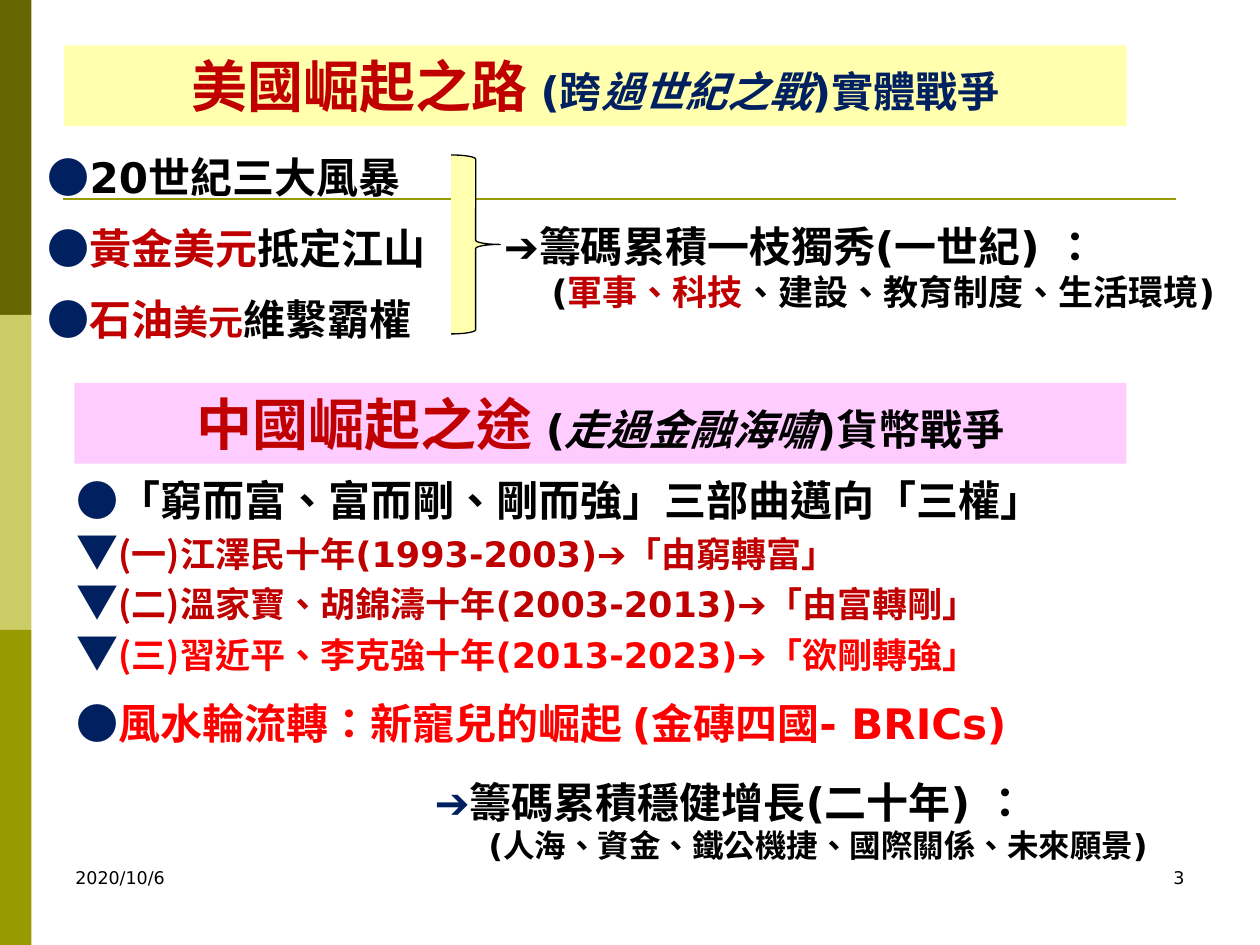
from collections import namedtuple

from pptx import Presentation
from pptx.dml.color import RGBColor
from pptx.enum.shapes import MSO_CONNECTOR as CONNECTOR, MSO_SHAPE as SHAPE
from pptx.enum.text import MSO_ANCHOR as ANCHOR, PP_ALIGN as ALIGN
from pptx.oxml.ns import qn
from pptx.util import Inches, Pt

LATIN, CJK = "DejaVu Sans", "Noto Sans CJK SC"
BLACK, NAVY, CRIMSON, RED = "000000", "002060", "C00000", "FF0000"
YELLOW, PINK, OLIVE = "FFFFAD", "FFCCFF", "999900"

Span = namedtuple("Span", "text size color italic font bold",
                  defaults=(24, BLACK, False, LATIN, True))
DOT = Span("●", color=NAVY, font=CJK)
TRIANGLE = Span("▼", color=NAVY, font=CJK)


def color(hex_text):
    return RGBColor.from_string(hex_text)


class SlideBuilder:
    line_factor = 1.2

    def __init__(self, page):
        self.page = page

    def shape(self, kind, place, fill, line=None):
        shape = self.page.shapes.add_shape(kind, *map(Inches, place))
        shape.shadow.inherit = False
        shape.fill.solid()
        shape.fill.fore_color.rgb = color(fill)
        if line:
            shape.line.color.rgb = color(line)
            shape.line.width = Pt(0.75)
        else:
            shape.line.fill.background()
        return shape

    def rule(self, start, end, line, width):
        rule = self.page.shapes.add_connector(
            CONNECTOR.STRAIGHT, *map(Inches, start + end))
        rule.line.color.rgb = color(line)
        rule.line.width = Pt(width)
        properties = rule._element.spPr
        properties.append(properties.makeelement(qn("a:effectLst"), {}))

    def text(self, place, paragraphs, **layout):
        box = self.page.shapes.add_textbox(*map(Inches, place))
        self.fill_frame(box.text_frame, paragraphs, **layout)

    def banner(self, place, fill, spans):
        box = self.shape(SHAPE.RECTANGLE, place, fill)
        self.fill_frame(box.text_frame, [spans], align=ALIGN.CENTER)

    def fill_frame(self, frame, paragraphs, align=ALIGN.LEFT, gaps=(), indents=()):
        """Gaps (points) and indents (inches) are keyed by paragraph number."""
        gaps, indents = dict(gaps), dict(indents)
        frame.word_wrap = True
        frame.vertical_anchor = ANCHOR.TOP
        for number, spans in enumerate(paragraphs):
            para = frame.add_paragraph() if number else frame.paragraphs[0]
            para.alignment = align
            para.space_before = Pt(gaps.get(number, 0))
            para.line_spacing = Pt(self.line_factor * max(s.size for s in spans))
            if number in indents:
                para._p.get_or_add_pPr().set("indent", str(Inches(indents[number])))
            for span in spans:
                self.add_span(para, span)

    def add_span(self, para, span):
        run = para.add_run()
        run.text = span.text
        font = run.font
        font.name, font.size = span.font, Pt(span.size)
        font.bold, font.italic = span.bold, span.italic
        font.color.rgb = color(span.color)
        properties = run._r.get_or_add_rPr()
        properties.set("lang", "zh-TW")
        properties.append(properties.makeelement(qn("a:ea"), {"typeface": CJK}))


def main():
    deck = Presentation()
    deck.slide_width, deck.slide_height = Inches(10), Inches(7.5)
    builder = SlideBuilder(deck.slides.add_slide(deck.slide_layouts[6]))

    # Side bands and rule
    for index, fill in enumerate(("666600", "CCCC66", OLIVE)):
        builder.shape(SHAPE.RECTANGLE, (0, 2.5 * index, 0.25, 2.5), fill)
    builder.rule((0.5, 1.58), (9.33, 1.58), OLIVE, 1.5)

    # Date and page number
    for left, label, align in ((0.5, "2020/10/6", ALIGN.LEFT),
                               (7.17, "3", ALIGN.RIGHT)):
        builder.text((left, 6.83, 2.33, 0.5),
                     [[Span(label, 10, bold=False)]], align=align)

    # First half: the rise of the United States
    builder.banner((0.51, 0.36, 8.43, 0.64), YELLOW, [
        Span("美國崛起之路 ", 32, CRIMSON), Span("(跨", color=NAVY),
        Span("過世紀之戰", color=NAVY, italic=True),
        Span(")實體戰爭", color=NAVY)])
    builder.text((0.28, 1.15, 3.39, 1.65), [
        [DOT, Span("20世紀三大風暴")],
        [DOT, Span("黃金美元", color=CRIMSON), Span("抵定江山")],
        [DOT, Span("石油", color=CRIMSON), Span("美元", 20, CRIMSON),
         Span("維繫霸權")],
    ], gaps={0: 12, 1: 12, 2: 12})
    builder.text((3.9, 1.7, 5.87, 0.84), [
        [Span("➔籌碼累積一枝獨秀(一世紀) ：")],
        [Span("(", 20), Span("軍事、科技", 20, CRIMSON),
         Span("、建設、教育制度、生活環境)", 20)],
    ], indents={1: 0.38})
    builder.shape(SHAPE.RIGHT_BRACE, (3.58, 1.23, 0.39, 1.42), YELLOW, BLACK)

    # Second half: the rise of China
    builder.banner((0.59, 3.04, 8.35, 0.64), PINK, [
        Span("中國崛起之途 ", 32, CRIMSON), Span("("),
        Span("走過金融海嘯", italic=True), Span(")貨幣戰爭")])
    eras = (("(一)", "江澤民十年(1993-2003)➔「由窮轉富」", CRIMSON),
            ("(二)", "溫家寶、胡錦濤十年(2003-2013)➔「由富轉剛」", CRIMSON),
            ("(三)", "習近平、李克強十年(2013-2023)➔「欲剛轉強」", RED))
    builder.text((0.51, 3.72, 8.43, 2.29), [
        [DOT, Span("「窮而富、富而剛、剛而強」三部曲邁向「三權」")],
        *([TRIANGLE, Span(mark, 20, tint, font=CJK), Span(era, 20, tint)]
          for mark, era, tint in eras),
        [DOT, Span("風水輪流轉：新寵兒的崛起 (金磚四國- BRICs)", color=RED)],
    ], gaps={4: 12})
    builder.text((3.35, 6.11, 5.91, 0.81), [
        [Span("➔", color=NAVY, font=CJK), Span("籌碼累積穩健增長(二十年) ：")],
        [Span("(人海、資金、鐵公機捷、國際關係、未來願景)", 18)],
    ], indents={1: 0.43})

    deck.save("out.pptx")


if __name__ == "__main__":
    main()
